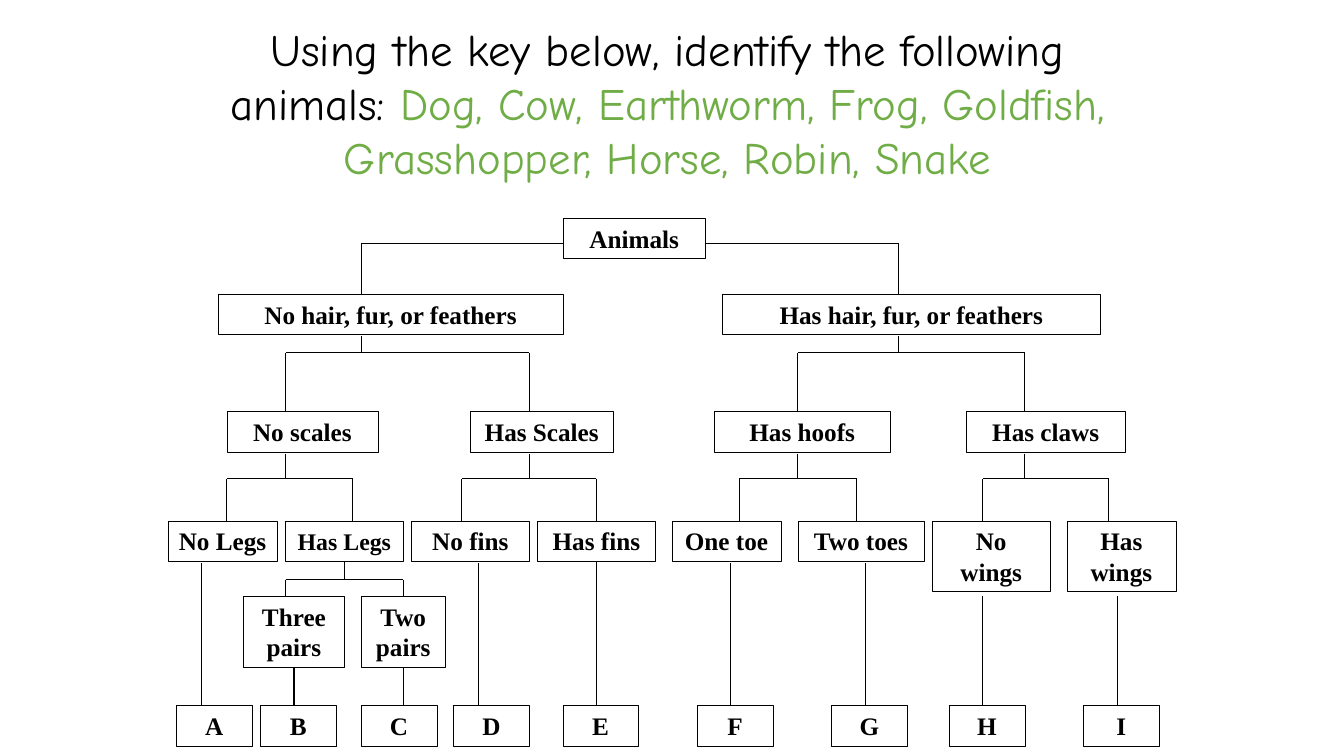
from dataclasses import dataclass

from lxml import etree
from pptx import Presentation
from pptx import util as u
from pptx.dml.color import RGBColor
from pptx.enum import shapes, text
from pptx.oxml.ns import qn
from pptx.shapes.autoshape import Shape
from pptx.slide import Slide

COLUMNS, ROWS = 160, 90
CELL = u.Inches(1) // 12


@dataclass(frozen=True)
class Theme:
    ink: RGBColor = RGBColor(0x00, 0x00, 0x00)
    accent: RGBColor = RGBColor(0x70, 0xAD, 0x47)
    title_font: str = "Comic Neue"
    key_font: str = "Times New Roman"
    title_size: float = 32
    key_size: float = 18
    small_key_size: float = 17
    box_line: float = 0.25
    branch_line: float = 0.75


@dataclass(frozen=True)
class Box:
    label: str
    left: int
    top: int
    width: int
    lines: int = 1
    small: bool = False

    @property
    def middle(self) -> float:
        return self.left + self.width / 2

    @property
    def height(self) -> float:
        return 1.2 + 3.6 * self.lines

    @property
    def foot(self) -> int:
        """Row where lines leaving the box downwards start."""
        return self.top + 1 + 4 * self.lines


@dataclass(frozen=True)
class Fork:
    parent: str
    stem: int
    bar: int
    children: tuple[tuple[str, int], tuple[str, int]]


@dataclass(frozen=True)
class Answer:
    parent: str
    column: int
    letter: str


THEME = Theme()
ROOT = Box("Animals", 67, 26, 17)
ROOT_BAR = 29
ROOT_CHILDREN = (("No hair, fur, or feathers", 43), ("Has hair, fur, or feathers", 107))

BOXES = [
    ROOT,
    Box("No hair, fur, or feathers", 26, 35, 41),
    Box("Has hair, fur, or feathers", 86, 35, 45),
    Box("No scales", 27, 49, 18),
    Box("Has Scales", 56, 49, 17),
    Box("Has hoofs", 85, 49, 21),
    Box("Has claws", 115, 49, 19),
    Box("No Legs", 20, 62, 13),
    Box("Has Legs", 34, 62, 14, small=True),
    Box("No fins", 49, 62, 14),
    Box("Has fins", 64, 62, 14),
    Box("One toe", 80, 62, 13),
    Box("Two toes", 95, 62, 15),
    Box("No wings", 111, 62, 14, lines=2),
    Box("Has wings", 127, 62, 13, lines=2),
    Box("Three pairs", 29, 71, 12, lines=2),
    Box("Two pairs", 43, 71, 10, lines=2),
] + [
    Box(letter, left, 84, 9)
    for letter, left in zip("ABCDEFGHI", (21, 31, 43, 54, 67, 83, 99, 113, 129))
]

FORKS = [
    Fork("No hair, fur, or feathers", 43, 42, (("No scales", 34), ("Has Scales", 63))),
    Fork("Has hair, fur, or feathers", 107, 42, (("Has hoofs", 95), ("Has claws", 122))),
    Fork("No scales", 34, 57, (("No Legs", 27), ("Has Legs", 42))),
    Fork("Has Scales", 63, 57, (("No fins", 55), ("Has fins", 71))),
    Fork("Has hoofs", 95, 57, (("One toe", 88), ("Two toes", 102))),
    Fork("Has claws", 122, 57, (("No wings", 117), ("Has wings", 132))),
    Fork("Has Legs", 41, 69, (("Three pairs", 34), ("Two pairs", 48))),
]

ANSWERS = [
    Answer("No Legs", 24, "A"),
    Answer("Three pairs", 35, "B"),
    Answer("Two pairs", 48, "C"),
    Answer("No fins", 57, "D"),
    Answer("Has fins", 71, "E"),
    Answer("One toe", 87, "F"),
    Answer("Two toes", 103, "G"),
    Answer("No wings", 117, "H"),
    Answer("Has wings", 133, "I"),
]


def cells(count: float) -> u.Emu:
    return u.Emu(round(count * CELL))


def add_title(page: Slide) -> None:
    title = page.shapes.title
    title.left, title.top = cells(23), cells(2)
    title.width, title.height = cells(113), cells(20.6)
    frame = title.text_frame
    frame.word_wrap = True
    frame.auto_size = text.MSO_AUTO_SIZE.SHAPE_TO_FIT_TEXT
    frame.vertical_anchor = text.MSO_ANCHOR.TOP
    para = frame.paragraphs[0]
    para.alignment = text.PP_ALIGN.CENTER
    para.font.name = THEME.title_font
    para.font.size = u.Pt(THEME.title_size)
    for words, color in (
        ("Using the key below, identify the following animals: ", THEME.ink),
        ("Dog, Cow, Earthworm, Frog, Goldfish, Grasshopper, Horse, Robin, Snake", THEME.accent),
    ):
        span = para.add_run()
        span.text = words
        span.font.color.rgb = color


def add_box(page: Slide, box: Box) -> Shape:
    shape = page.shapes.add_shape(
        shapes.MSO_SHAPE.RECTANGLE,
        cells(box.left), cells(box.top), cells(box.width), cells(box.height),
    )
    shape.shadow.inherit = False
    shape.fill.background()
    shape.line.color.rgb = THEME.ink
    shape.line.width = u.Pt(THEME.box_line)
    frame = shape.text_frame
    frame.word_wrap = True
    frame.text = box.label
    para = frame.paragraphs[0]
    para.alignment = text.PP_ALIGN.CENTER
    para.font.name = THEME.key_font
    para.font.size = u.Pt(THEME.small_key_size if box.small else THEME.key_size)
    para.font.bold = True
    para.font.color.rgb = THEME.ink
    return shape


def add_line(page: Slide, start: tuple[int, int], end: tuple[int, int],
             above: Shape | None = None, below: Shape | None = None) -> None:
    """Draw a line, joined to the given boxes above and below it."""
    line = page.shapes.add_connector(
        shapes.MSO_CONNECTOR.STRAIGHT, *map(cells, start), *map(cells, end)
    )
    line.line.color.rgb = THEME.ink
    line.line.width = u.Pt(THEME.branch_line)
    etree.SubElement(line.element.spPr, qn("a:effectLst"))
    if above is not None:
        line.begin_connect(above, 2)
    if below is not None:
        line.end_connect(below, 0)


def add_key(page: Slide) -> None:
    boxes = {box.label: box for box in BOXES}
    drawn = {box.label: add_box(page, box) for box in BOXES}

    def centred(label: str, column: int) -> Shape | None:
        return drawn[label] if boxes[label].middle == column else None

    def drop(child: str, column: int, row: int) -> None:
        add_line(page, (column, row), (column, boxes[child].top), below=centred(child, column))

    for side, (child, column) in zip((ROOT.left, ROOT.left + ROOT.width), ROOT_CHILDREN):
        add_line(page, (side, ROOT_BAR), (column, ROOT_BAR))
        drop(child, column, ROOT_BAR)
    for fork in FORKS:
        add_line(page, (fork.stem, boxes[fork.parent].foot), (fork.stem, fork.bar),
                 above=centred(fork.parent, fork.stem))
        (_, first), (_, last) = fork.children
        add_line(page, (first, fork.bar), (last, fork.bar))
        for child, column in fork.children:
            drop(child, column, fork.bar)
    for answer in ANSWERS:
        add_line(page, (answer.column, boxes[answer.parent].foot),
                 (answer.column, boxes[answer.letter].top),
                 above=centred(answer.parent, answer.column),
                 below=centred(answer.letter, answer.column))


def main() -> None:
    deck = Presentation()
    deck.slide_width, deck.slide_height = cells(COLUMNS), cells(ROWS)
    page = deck.slides.add_slide(deck.slide_layouts.get_by_name("Title Only"))
    add_title(page)
    add_key(page)
    deck.save("out.pptx")


if __name__ == "__main__":
    main()
